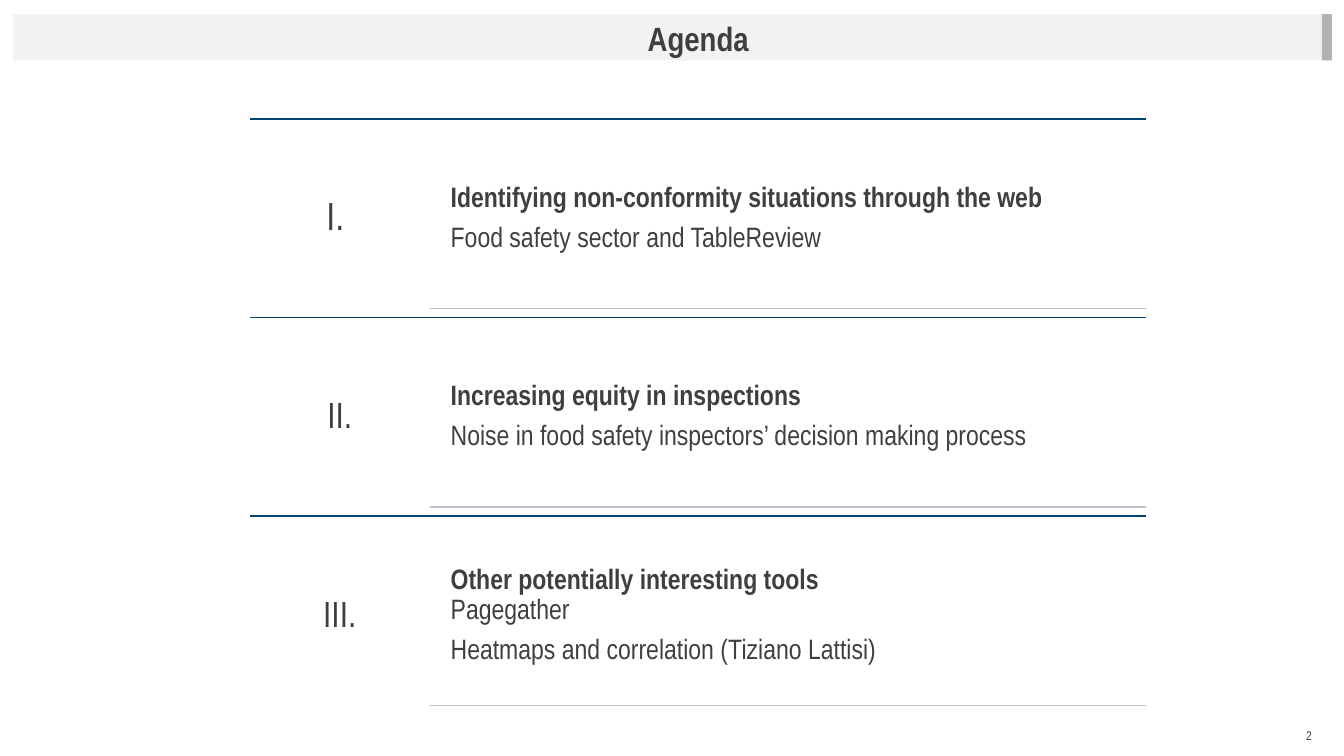
import pptx
import pptx.util
import pptx.dml.color
import pptx.enum.shapes
import pptx.enum.text
import lxml.etree

Inches = pptx.util.Inches
Align = pptx.enum.text.PP_ALIGN
Anchor = pptx.enum.text.MSO_ANCHOR

TITLE = "Agenda"
PAGE_NUMBER = "2"
TOPICS = [
    {"numeral": "I. ", "size": 28, "lines": [
        [("Identifying non-conformity situations through the web", True)],
        [("Food safety sector and TableReview", False)]]},
    {"numeral": "II.", "size": 26, "lines": [
        [("Increasing equity in inspections", True)],
        [("Noise in food safety inspectors’ decision making process", False)]]},
    {"numeral": "III.", "size": 26, "lines": [
        [("Other potentially interesting tools", True), ("Pagegather", False)],
        [("Heatmaps and correlation (Tiziano Lattisi)", False)]]},
]

THEME = {
    "font": "Arial Narrow", "text": "3F3F3F", "band": "F2F2F2",
    "accent": "B2B2B2", "rule": "004775", "soft_rule": "BDC1CA",
    "title_size": 24, "topic_size": 20, "page_size": 9,
}

LEFT, RIGHT, TOP, ROW = 2.48, 11.37, 1.18, 1.97
NUMERAL_WIDTH, TOPIC_LEFT = 1.78, 4.39
TOPIC_GAP, TOPIC_HEIGHT = 0.09, 1.79


def color(name):
    return pptx.dml.color.RGBColor.from_string(THEME[name])


def set_all(target, values):
    for name, value in values.items():
        setattr(target, name, value)


def add_bar(page, left, width, fill):
    bar = page.shapes.add_shape(
        pptx.enum.shapes.MSO_SHAPE.RECTANGLE,
        Inches(left), Inches(0.14), Inches(width), Inches(0.46))
    bar.shadow.inherit = False
    bar.fill.solid()
    bar.fill.fore_color.rgb = color(fill)
    bar.line.fill.background()


def add_rule(page, left, top, name):
    rule = page.shapes.add_connector(
        pptx.enum.shapes.MSO_CONNECTOR.STRAIGHT,
        Inches(left), Inches(top), Inches(RIGHT), Inches(top))
    rule.line.color.rgb = color(name)
    rule.line.width = pptx.util.Pt(1)
    lxml.etree.SubElement(
        rule.element.spPr, pptx.oxml.ns.qn("a:effectLst"))


def write(box, lines, size, align, inset=(0.1, 0.05), spacing=0.9, after=0):
    frame = box.text_frame
    across, down = map(Inches, inset)
    set_all(frame, {
        "word_wrap": True, "auto_size": pptx.enum.text.MSO_AUTO_SIZE.NONE,
        "vertical_anchor": Anchor.MIDDLE,
        "margin_left": across, "margin_right": across,
        "margin_top": down, "margin_bottom": down})
    for index, line in enumerate(lines):
        para = frame.add_paragraph() if index else frame.paragraphs[0]
        set_all(para, {"alignment": align, "line_spacing": spacing,
                       "space_after": pptx.util.Pt(after)})
        for part, (text, bold) in enumerate(line):
            if part:
                para.add_line_break()
            span = para.add_run()
            span.text = text
            set_all(span.font, {"name": THEME["font"], "bold": bold,
                                "size": pptx.util.Pt(size)})
            span.font.color.rgb = color("text")


def add_text(page, area, *content, **options):
    write(page.shapes.add_textbox(*map(Inches, area)), *content, **options)


def add_topic(page, top, topic):
    add_rule(page, LEFT, top, "rule")
    add_text(page, (LEFT, top, NUMERAL_WIDTH, ROW),
             [[(topic["numeral"], False)]], topic["size"], Align.CENTER,
             inset=(0.11, 0.11), after=topic["size"] * 0.35)
    topic_top = top + TOPIC_GAP
    add_text(page, (TOPIC_LEFT, topic_top, RIGHT - TOPIC_LEFT, TOPIC_HEIGHT),
             topic["lines"], THEME["topic_size"], Align.LEFT,
             inset=(0.08, 0.08), after=THEME["topic_size"] * 0.35)
    add_rule(page, LEFT + NUMERAL_WIDTH, topic_top + TOPIC_HEIGHT, "soft_rule")


def main():
    deck = pptx.Presentation()
    set_all(deck, {"slide_width": Inches(13.33), "slide_height": Inches(7.5)})
    page = deck.slides.add_slide(deck.slide_layouts[5])

    add_bar(page, 0.13, 13.08, "band")
    add_bar(page, 13.11, 0.1, "accent")

    title = page.shapes.title
    set_all(title, {"left": Inches(0.74), "top": Inches(0.17),
                    "width": Inches(12.37), "height": Inches(0.46)})
    write(title, [[(TITLE, True)]], THEME["title_size"], Align.CENTER)
    page.shapes._spTree.append(title.element)

    for index, topic in enumerate(TOPICS):
        add_topic(page, TOP + index * ROW, topic)

    add_text(page, (10.11, 7.1, 3, 0.4), [[(PAGE_NUMBER, False)]],
             THEME["page_size"], Align.RIGHT, spacing=1.0)
    deck.save("out.pptx")


if __name__ == "__main__":
    main()
